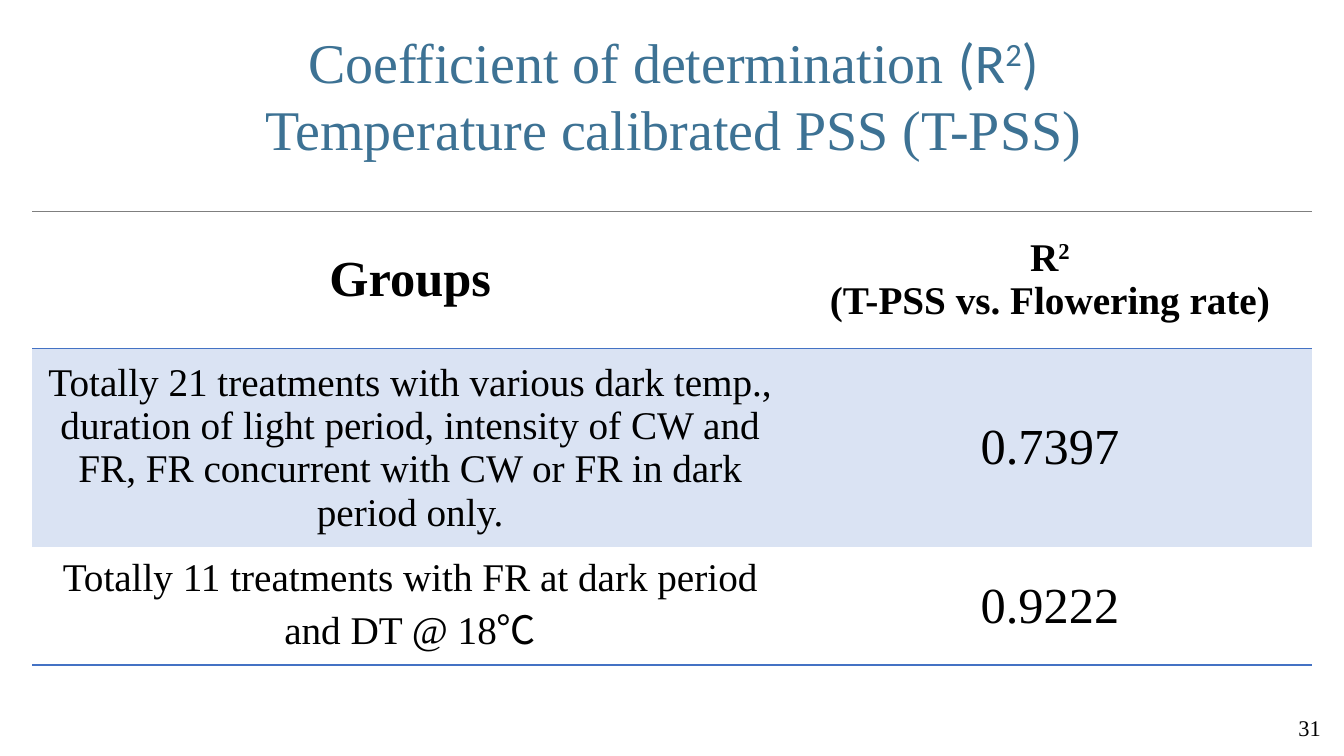
import pptx
import pptx.util
import pptx.dml.color
import pptx.enum.text
import pptx.oxml
import pptx.oxml.ns

Pt = pptx.util.Pt
ALIGN = pptx.enum.text.PP_ALIGN
ANCHOR = pptx.enum.text.MSO_ANCHOR
SERIF = "Times New Roman"
COLORS = {"title": "3D7294", "text": "000000", "band": "DAE3F3",
          "rule": "4472C4", "top_rule": "7F7F7F"}


def write_text(frame, paragraphs, size=28, color="text", bold=False, align=ALIGN.CENTER):
    frame.word_wrap = True
    for index, pieces in enumerate(paragraphs):
        paragraph = frame.paragraphs[0] if index == 0 else frame.add_paragraph()
        paragraph.alignment = align
        for text, font_name, raised in pieces:
            run = paragraph.add_run()
            run.text = text
            run.font.name = font_name
            run.font.size = Pt(size)
            run.font.bold = bold
            run.font.color.rgb = pptx.dml.color.RGBColor.from_string(COLORS[color])
            properties = run.font._element
            if raised:
                properties.set("baseline", "30000")
            if font_name.startswith("Noto"):
                east_asian = properties.makeelement(pptx.oxml.ns.qn("a:ea"), {"typeface": font_name})
                properties.append(east_asian)


class SlideBuilder:
    def __init__(self, presentation):
        self.slide = presentation.slides.add_slide(presentation.slide_layouts[6])

    def add_text(self, left, top, width, height, paragraphs, anchor=ANCHOR.TOP, **text_format):
        shape = self.slide.shapes.add_textbox(Pt(left), Pt(top), Pt(width), Pt(height))
        shape.text_frame.vertical_anchor = anchor
        write_text(shape.text_frame, paragraphs, **text_format)

    def add_table(self, left, top, column_widths, row_heights, rows):
        shape = self.slide.shapes.add_table(
            len(rows), len(column_widths), Pt(left), Pt(top),
            Pt(sum(column_widths)), Pt(sum(row_heights)))
        table = shape.table
        table.horz_banding = False
        table.first_row = False
        for column, width in zip(table.columns, column_widths):
            column.width = Pt(width)
        for row, height, (cells, fill, borders) in zip(table.rows, row_heights, rows):
            row.height = Pt(height)
            for cell, (paragraphs, text_format) in zip(row.cells, cells):
                cell.vertical_anchor = ANCHOR.MIDDLE
                write_text(cell.text_frame, paragraphs, **text_format)
                self.set_borders(cell, borders)
                if fill:
                    cell.fill.solid()
                    cell.fill.fore_color.rgb = pptx.dml.color.RGBColor.from_string(COLORS[fill])
                else:
                    cell.fill.background()

    def set_borders(self, cell, borders):
        properties = cell._tc.get_or_add_tcPr()
        for side in ("lnL", "lnR", "lnT", "lnB"):
            paint = "<a:noFill/>"
            if side in borders:
                paint = f'<a:solidFill><a:srgbClr val="{COLORS[borders[side]]}"/></a:solidFill>'
            properties.append(pptx.oxml.parse_xml(
                f'<a:{side} {pptx.oxml.ns.nsdecls("a")} w="{int(Pt(1))}">{paint}</a:{side}>'))


def main():
    presentation = pptx.Presentation()
    presentation.slide_width = Pt(960)
    presentation.slide_height = Pt(540)
    builder = SlideBuilder(presentation)

    title = [[("Coefficient of determination ", SERIF, False), ("(R", "Calibri", False),
              ("2", "Calibri", True), (")", "Calibri", False)],
             [("Temperature calibrated PSS (T-PSS)", SERIF, False)]]
    builder.add_text(11.5, 16, 939, 152, title, size=40, color="title")

    score_heading = [[("R", SERIF, False), ("2", SERIF, True)],
                     [("(T-PSS vs. Flowering rate)", SERIF, False)]]
    all_treatments = [[(
        "Totally 21 treatments with various dark temp., duration of light period, "
        "intensity of CW and FR, FR concurrent with CW or FR in dark period only.", SERIF, False)]]
    dark_treatments = [[("Totally 11 treatments with FR at dark period and DT @ 18", SERIF, False),
                        ("℃", "Noto Sans CJK SC", False)]]
    rows = [
        ([([[("Groups", SERIF, False)]], {"size": 36, "bold": True}),
          (score_heading, {"bold": True})],
         None, {"lnT": "top_rule", "lnB": "rule"}),
        ([(all_treatments, {}), ([[("0.7397", SERIF, False)]], {"size": 36})],
         "band", {"lnT": "rule"}),
        ([(dark_treatments, {}), ([[("0.9222", SERIF, False)]], {"size": 36})],
         None, {"lnB": "rule"}),
    ]
    builder.add_table(23, 151, (540, 374), (98, 142, 84), rows)

    builder.add_text(734.5, 505, 216, 29, [[("31", SERIF, False)]],
                     anchor=ANCHOR.MIDDLE, size=16, align=ALIGN.RIGHT)
    presentation.save("out.pptx")


if __name__ == "__main__":
    main()
